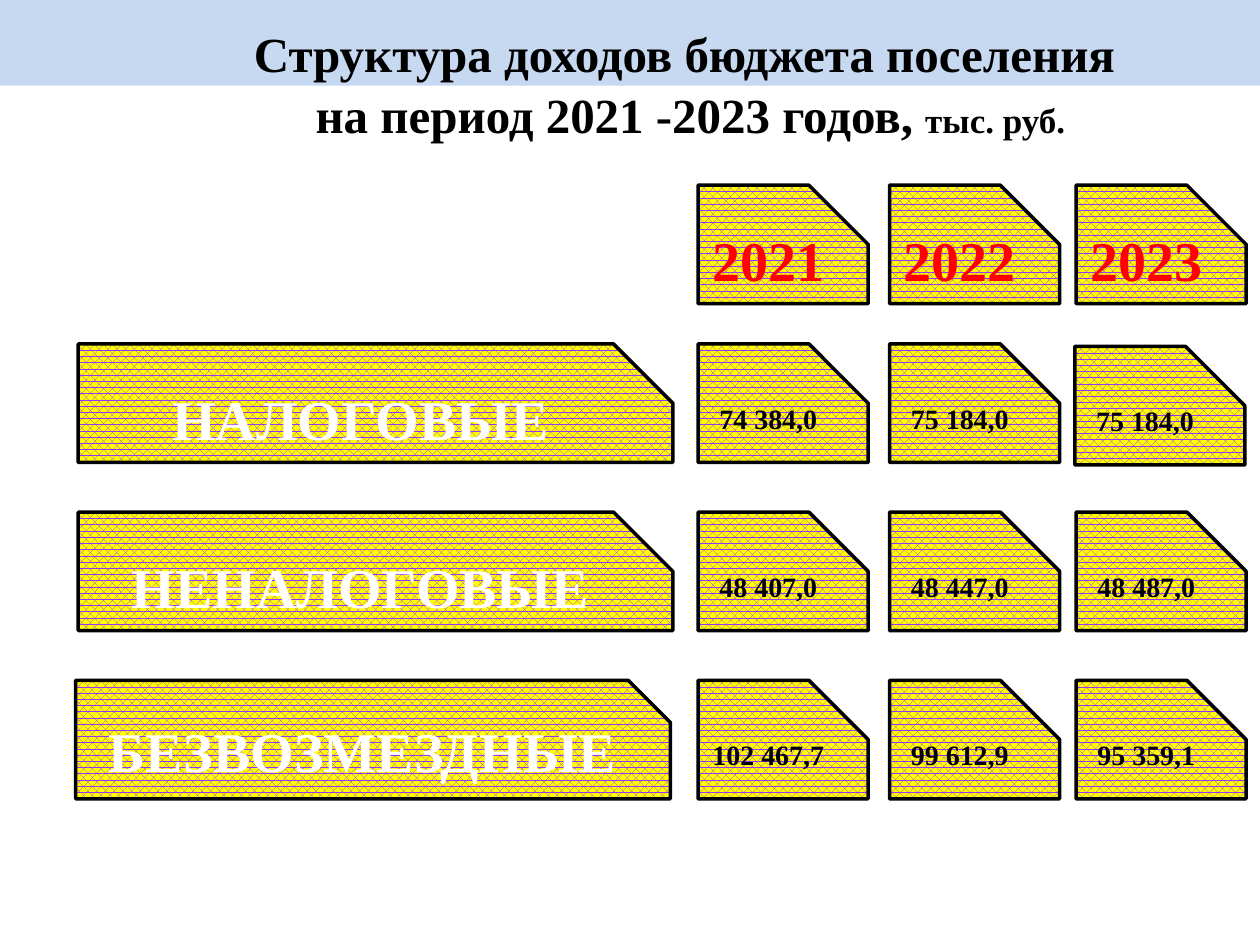
from pptx import Presentation
from pptx.dml.color import RGBColor
from pptx.enum.dml import MSO_PATTERN
from pptx.enum.shapes import MSO_SHAPE
from pptx.enum.text import MSO_ANCHOR, MSO_AUTO_SIZE, PP_ALIGN
from pptx.util import Inches, Pt

FONT = "Times New Roman"
BLACK = RGBColor(0x00, 0x00, 0x00)
WHITE = RGBColor(0xFF, 0xFF, 0xFF)
RED = RGBColor(0xFF, 0x00, 0x00)
YELLOW = RGBColor(0xFF, 0xFF, 0x00)
VIOLET = RGBColor(0x99, 0x33, 0xFF)
PALE_BLUE = RGBColor(0xC6, 0xD9, 0xF1)

TITLE_LINES = [
    [("Структура доходов бюджета поселения ", 28)],
    [("на период 2021 -2023 годов, ", 28), ("тыс. руб.", 20)],
]
YEARS = ["2021", "2022", "2023"]
INCOME_ROWS = [
    ("НАЛОГОВЫЕ", 0.62, 0.5, ["74 384,0", "75 184,0", "75 184,0"]),
    ("НЕНАЛОГОВЫЕ", 0.62, 0.5, ["48 407,0", "48 447,0", "48 487,0"]),
    ("БЕЗВОЗМЕЗДНЫЕ", 0.6, 0.355, ["102 467,7", "99 612,9", "95 359,1"]),
]
NUDGES = {(0, 2): (-0.01, 0.02)}

COLUMN_LEFTS = [5.54, 7.06, 8.54]
YEAR_TOP = 1.47
FIRST_ROW_TOP, ROW_STEP = 2.73, 1.335
LABEL_WIDTH, CELL_WIDTH, CARD_HEIGHT = 4.72, 1.35, 0.94


def add_run(paragraph, text, size, color):
    run = paragraph.add_run()
    run.text = text
    run.font.name = FONT
    run.font.size = Pt(size)
    run.font.bold = True
    run.font.color.rgb = color


def add_band(slide):
    band = slide.shapes.add_shape(
        MSO_SHAPE.RECTANGLE, 0, 0, Inches(10), Inches(0.68))
    band.shadow.inherit = False
    band.fill.solid()
    band.fill.fore_color.rgb = PALE_BLUE
    band.line.fill.background()
    slide.shapes._spTree.insert(2, band._element)


def fill_title(title):
    title.left, title.top = Inches(1.15), Inches(0.11)
    title.width, title.height = Inches(8.66), Inches(1.04)
    frame = title.text_frame
    frame.word_wrap = True
    frame.auto_size = MSO_AUTO_SIZE.NONE
    frame.vertical_anchor = MSO_ANCHOR.TOP
    for index, line in enumerate(TITLE_LINES):
        paragraph = frame.add_paragraph() if index else frame.paragraphs[0]
        paragraph.alignment = PP_ALIGN.CENTER
        paragraph.line_spacing = 1.05
        paragraph.space_before = Pt(0)
        for text, size in line:
            add_run(paragraph, text, size, BLACK)


def add_card(slide, left, top, width, text, size, color, snip=0.5):
    card = slide.shapes.add_shape(
        MSO_SHAPE.SNIP_1_RECTANGLE,
        Inches(left), Inches(top), Inches(width), Inches(CARD_HEIGHT))
    card.adjustments[0] = snip
    card.shadow.inherit = False
    card.fill.patterned()
    card.fill.pattern = MSO_PATTERN.PERCENT_70
    card.fill.fore_color.rgb = VIOLET
    card.fill.back_color.rgb = YELLOW
    card.line.color.rgb = BLACK
    card.line.width = Pt(2)
    card.text_frame.vertical_anchor = MSO_ANCHOR.MIDDLE
    paragraph = card.text_frame.paragraphs[0]
    paragraph.alignment = PP_ALIGN.CENTER
    add_run(paragraph, text, size, color)


def main():
    presentation = Presentation()
    presentation.slide_width = Inches(10)
    presentation.slide_height = Inches(7.5)
    slide = presentation.slides.add_slide(presentation.slide_layouts[5])
    add_band(slide)
    fill_title(slide.shapes.title)

    for left, year in zip(COLUMN_LEFTS, YEARS):
        add_card(slide, left, YEAR_TOP, CELL_WIDTH, year, 32, RED)

    for row, (label, label_left, snip, amounts) in enumerate(INCOME_ROWS):
        top = FIRST_ROW_TOP + row * ROW_STEP
        add_card(slide, label_left, top, LABEL_WIDTH, label, 32, WHITE, snip)
        for column, (left, amount) in enumerate(zip(COLUMN_LEFTS, amounts)):
            dx, dy = NUDGES.get((row, column), (0, 0))
            add_card(slide, left + dx, top + dy, CELL_WIDTH, amount, 16, BLACK)

    presentation.save("out.pptx")


if __name__ == "__main__":
    main()
